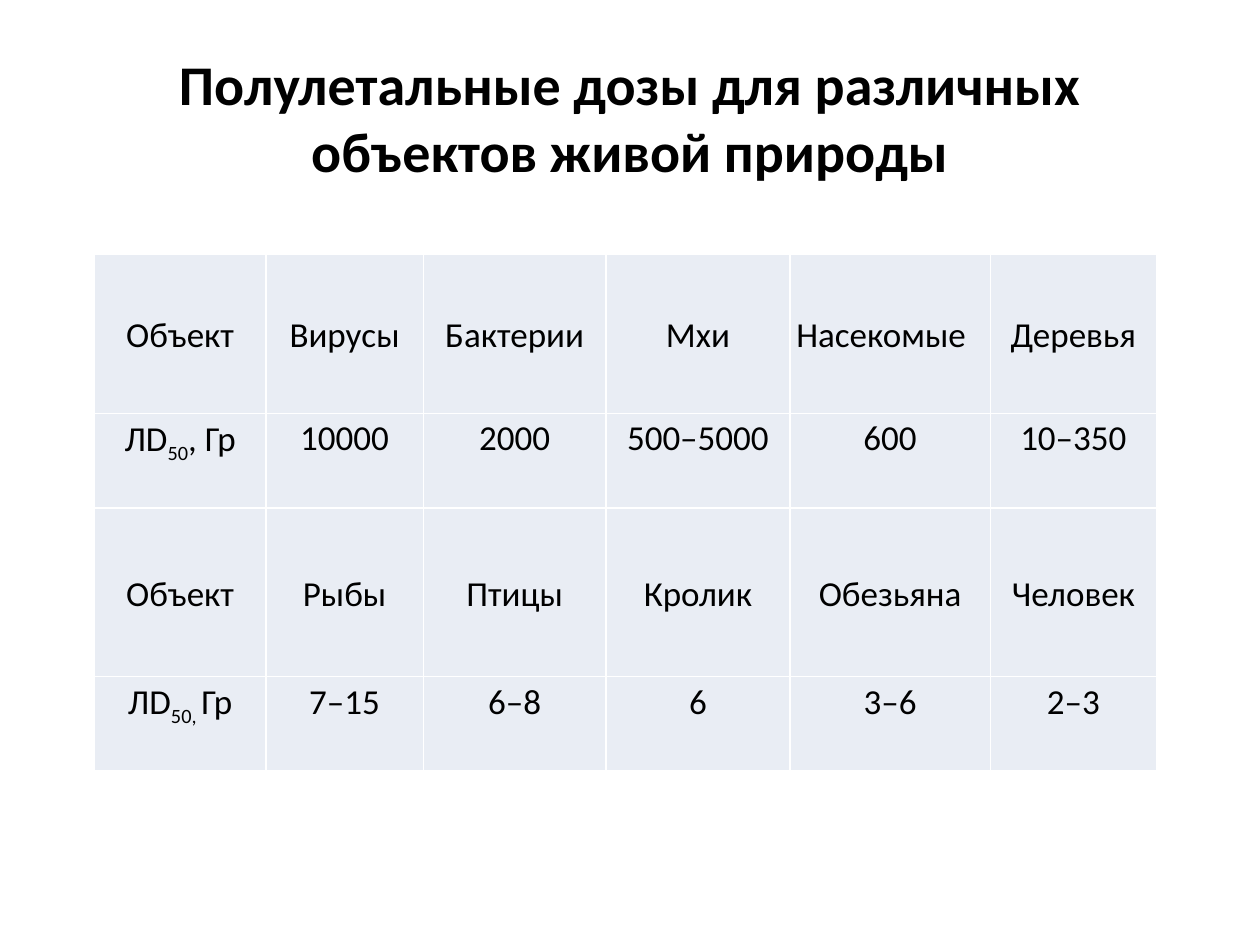
from lxml.etree import SubElement as Sub
from pptx import Presentation
from pptx.dml.color import RGBColor
from pptx.enum.text import MSO_ANCHOR as Anchor, PP_ALIGN as Align
from pptx.oxml.ns import qn
from pptx.util import Inches, Pt

COLS = [1.36, 1.25, 1.45, 1.46, 1.59, 1.32]
ROWS = [1.26, 0.75, 1.34, 0.75]
DATA = [
    ["Объект", "Вирусы", "Бактерии", "Мхи", "Насекомые", "Деревья"],
    [("ЛD", "50", ", Гр"), "10000", "2000", "500–5000", "600", "10–350"],
    ["Объект", "Рыбы", "Птицы", "Кролик", "Обезьяна", "Человек"],
    [("ЛD", "50, ", "Гр"), "7–15", "6–8", "6", "3–6", "2–3"],
]


def color(code):
    return RGBColor.from_string(code)


def write(frame, text, size=20, bold=False, align=Align.CENTER, space=None):
    para = frame.paragraphs[0]
    para.alignment = align
    para.line_spacing = space
    parts = (text,) if isinstance(text, str) else text
    for i, part in enumerate(parts):
        run = para.add_run()
        run.text = part
        font = run.font
        font.name = "Calibri"
        font.size = Pt(size)
        font.bold = bold
        font.color.rgb = color("000000")
        if i == 1:
            font._element.set("baseline", "-25000")


def border(cell, code, width):
    props = cell._tc.get_or_add_tcPr()
    for side in ("lnL", "lnR", "lnT", "lnB"):
        line = Sub(props, qn(f"a:{side}"), w=str(Pt(width)))
        fill = Sub(line, qn("a:solidFill"))
        Sub(fill, qn("a:srgbClr"), val=code)


def style(cell, anchor):
    cell.margin_left = cell.margin_right = Inches(0.05)
    cell.margin_top = cell.margin_bottom = 0
    cell.vertical_anchor = anchor
    border(cell, "FFFFFF", 1)
    cell.fill.solid()
    cell.fill.fore_color.rgb = color("E9EDF4")


def add_title(slide, text):
    title = slide.shapes.title
    title.left, title.top = Inches(0.5), Inches(0.3)
    title.width, title.height = Inches(9), Inches(1.25)
    frame = title.text_frame
    frame.vertical_anchor = Anchor.MIDDLE
    write(frame, text, size=32, bold=True)


def add_doses(slide):
    table = slide.shapes.add_table(
        len(ROWS), len(COLS), Inches(0.75), Inches(2.02),
        Inches(sum(COLS)), Inches(sum(ROWS))).table
    table.first_row = table.horz_banding = False
    for col, width in zip(table.columns, COLS):
        col.width = Inches(width)
    for r, (row, height) in enumerate(zip(table.rows, ROWS)):
        row.height = Inches(height)
        for cell, text in zip(row.cells, DATA[r]):
            style(cell, Anchor.TOP if r % 2 else Anchor.MIDDLE)
            align = Align.JUSTIFY if text == "Насекомые" else Align.CENTER
            write(cell.text_frame, text, align=align, space=1.1)


def main():
    deck = Presentation()
    deck.slide_width, deck.slide_height = Inches(10), Inches(7.5)
    slide = deck.slides.add_slide(deck.slide_layouts[5])
    add_title(slide, "Полулетальные дозы для различных объектов живой природы")
    add_doses(slide)
    deck.save("out.pptx")


if __name__ == "__main__":
    main()
